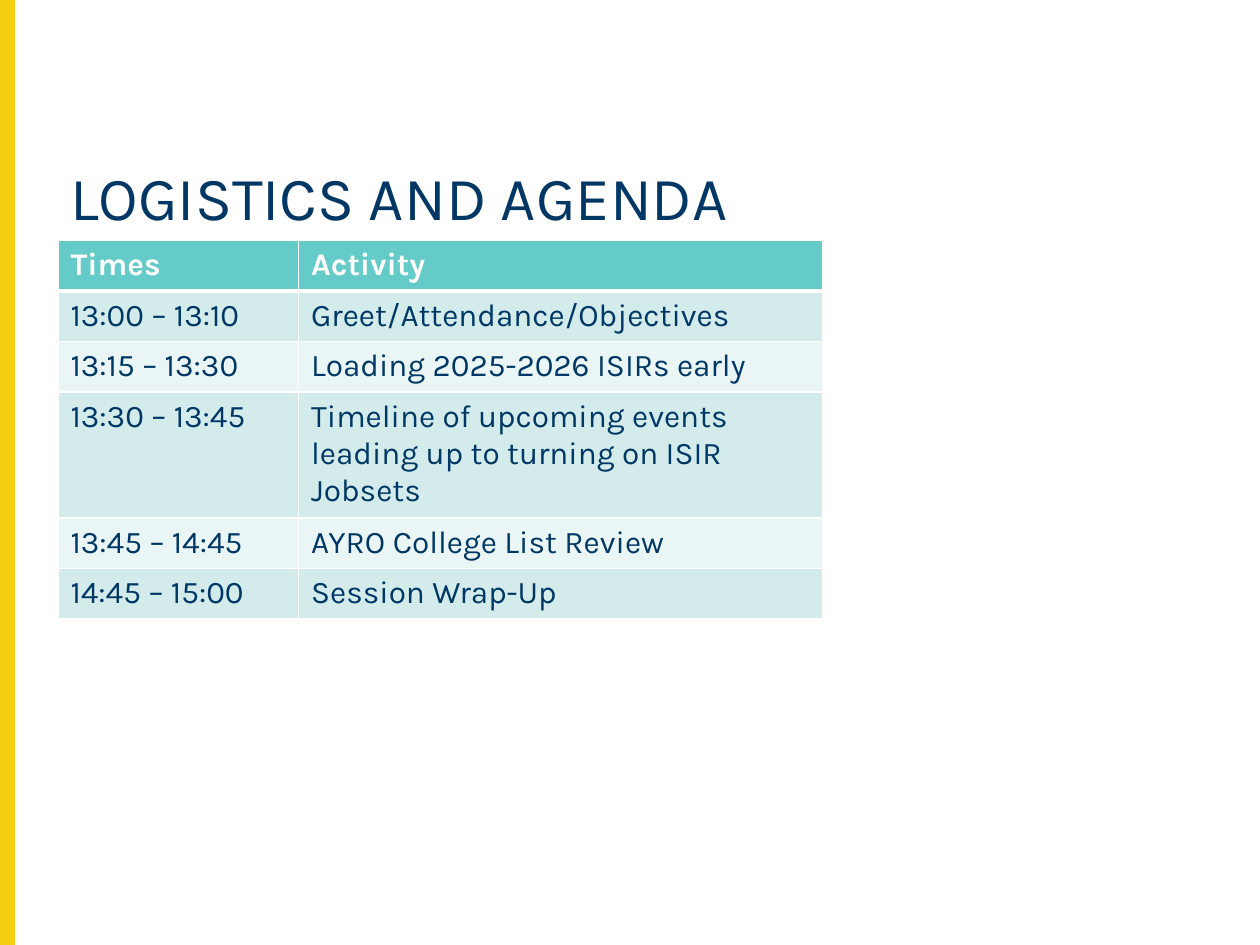
from lxml import etree
from pptx import Presentation
from pptx import util as u
from pptx.dml.color import RGBColor
from pptx.enum import shapes, text
from pptx.oxml.ns import qn

# Content
HEADING = "LOGISTICS AND AGENDA"
AGENDA = [
    ("Times", "Activity"),
    ("13:00 – 13:10", "Greet/Attendance/Objectives"),
    ("13:15 – 13:30", "Loading 2025-2026 ISIRs early"),
    ("13:30 – 13:45", "Timeline of upcoming events leading up to turning on ISIR Jobsets"),
    ("13:45 – 14:45", "AYRO College List Review"),
    ("14:45 – 15:00", "Session Wrap-Up"),
]
COLUMN_WIDTHS = (1.91, 4.16)
ROW_HEIGHT = 0.37
LEFT = 0.46

THEME = {
    "font": "Karla", "heading_size": 35, "table_size": 18,
    "navy": "003764", "yellow": "F4CE12", "white": "FFFFFF",
    "header": "65CBC9", "bands": ("D3ECEB", "EAF6F5"),
}


def rgb(name):
    return RGBColor.from_string(THEME.get(name, name))


def add_run(paragraph, words, size, color, bold=False):
    run = paragraph.add_run()
    run.text = words
    run.font.name = THEME["font"]
    run.font.size = u.Pt(size)
    run.font.bold = bold
    run.font.color.rgb = rgb(color)


def add_borders(cell, bottom_width):
    """Put white borders ahead of the cell's fill, as the schema requires."""
    properties = cell._tc.get_or_add_tcPr()
    widths = {"a:lnL": 1, "a:lnR": 1, "a:lnT": 1, "a:lnB": bottom_width}
    for position, (side, width) in enumerate(widths.items()):
        border = etree.Element(qn(side), w=str(u.Pt(width)))
        fill = etree.SubElement(border, qn("a:solidFill"))
        etree.SubElement(fill, qn("a:srgbClr"), val=THEME["white"])
        properties.insert(position, border)


def add_accent_bar(slide, height):
    bar = slide.shapes.add_shape(
        shapes.MSO_SHAPE.RECTANGLE, 0, 0, u.Inches(0.11), height)
    bar.shadow.inherit = False
    bar.fill.solid()
    bar.fill.fore_color.rgb = rgb("yellow")
    bar.line.color.rgb = rgb("yellow")
    bar.line.width = u.Pt(1)


def add_heading(slide):
    heading = slide.shapes.add_textbox(
        u.Inches(LEFT), u.Inches(1.25), u.Inches(9.33), u.Inches(0.79))
    frame = heading.text_frame
    frame.word_wrap = True
    frame.vertical_anchor = text.MSO_ANCHOR.TOP
    frame.margin_top = u.Inches(0.08)
    frame.paragraphs[0].line_spacing = 0.9
    add_run(frame.paragraphs[0], HEADING, THEME["heading_size"], "navy")


def add_agenda(slide):
    agenda = slide.shapes.add_table(
        len(AGENDA), len(COLUMN_WIDTHS), u.Inches(LEFT), u.Inches(1.91),
        u.Inches(sum(COLUMN_WIDTHS)), u.Inches(ROW_HEIGHT * len(AGENDA))).table
    for column, width in zip(agenda.columns, COLUMN_WIDTHS):
        column.width = u.Inches(width)
    for r, entry in enumerate(AGENDA):
        is_header = r == 0
        agenda.rows[r].height = u.Inches(ROW_HEIGHT)
        for c, words in enumerate(entry):
            cell = agenda.cell(r, c)
            cell.fill.solid()
            cell.fill.fore_color.rgb = rgb(
                "header" if is_header else THEME["bands"][(r - 1) % 2])
            # The rule under the header is shared with the first entry
            add_borders(cell, bottom_width=3 if is_header else 1)
            if r == 1:
                cell._tc.tcPr.find(qn("a:lnT")).set("w", str(u.Pt(3)))
            add_run(cell.text_frame.paragraphs[0], words, THEME["table_size"],
                    "white" if is_header else "navy", bold=is_header)


def main():
    deck = Presentation()
    deck.slide_width, deck.slide_height = u.Inches(10), u.Inches(7.5)
    slide = deck.slides.add_slide(deck.slide_layouts[6])
    slide.background.fill.solid()
    slide.background.fill.fore_color.rgb = rgb("white")
    add_accent_bar(slide, deck.slide_height)
    add_heading(slide)
    add_agenda(slide)
    deck.save("out.pptx")


if __name__ == "__main__":
    main()
